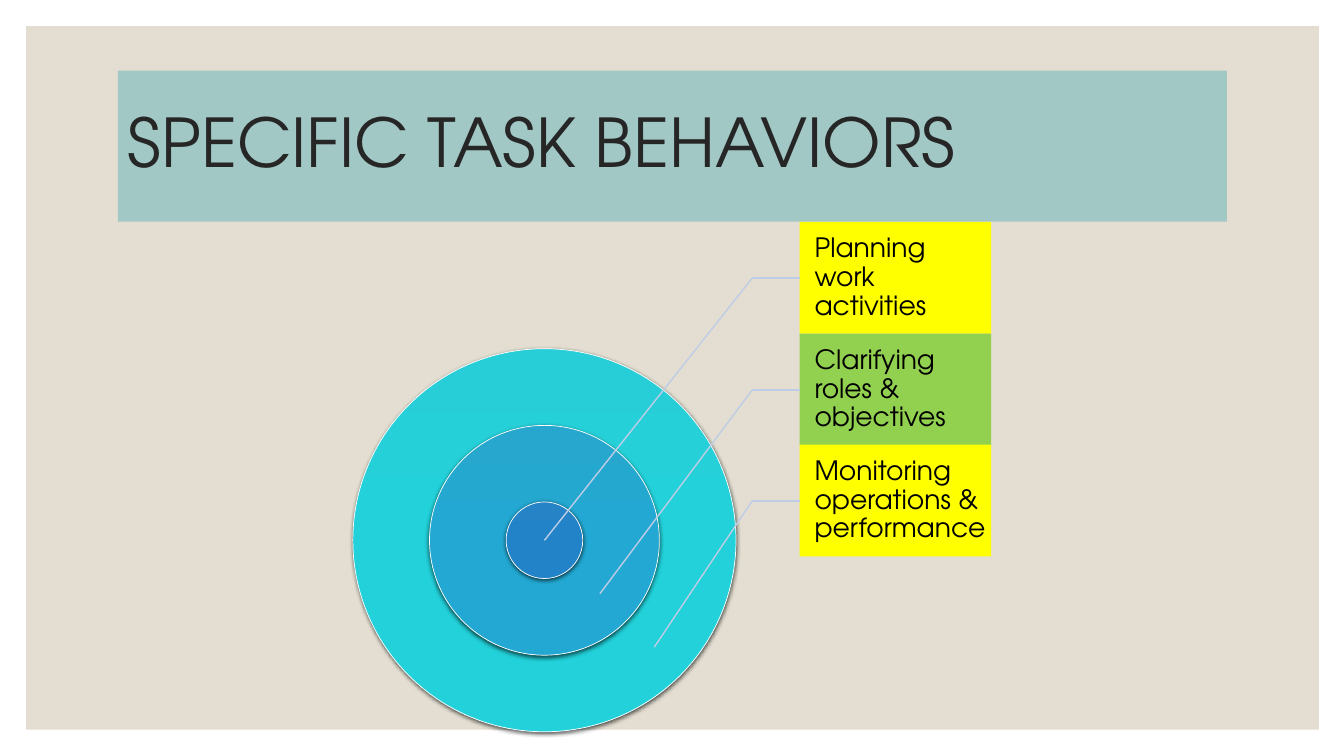
from dataclasses import dataclass

from pptx import Presentation
from pptx import util as u
from pptx.dml.color import RGBColor
from pptx.enum import shapes, text
from pptx.oxml import parse_xml
from pptx.oxml.ns import nsdecls, qn

PX = 9144  # EMU in one px, 100 px to the inch


@dataclass(frozen=True)
class Theme:
    font: str = "TeX Gyre Adventor"
    panel: str = "E3DED1"
    banner: str = "A1C8C5"
    title: str = "262626"
    label: str = "000000"
    outline: str = "FFFFFF"
    leader: str = "BECDE5"
    yellow: str = "FFFF00"
    green: str = "92D050"
    title_size: int = 48
    label_size: int = 19


@dataclass(frozen=True)
class Behavior:
    """A labelled task behavior and the point in the rings its leader reaches."""
    caption: str
    fill: str
    target: tuple[int, int]


@dataclass(frozen=True)
class Ring:
    diameter: int
    gradient: tuple[str, str, str]


THEME = Theme()
CENTER_X, CENTER_Y = 540, 536
RINGS = [
    Ring(380, ("27CED7", "22D1DA", "22D0D9")),
    Ring(228, ("27A7CE", "22A8D2", "22A8D1")),
    Ring(76, ("2683C6", "2283C9", "2282C8")),
]
BEHAVIORS = [
    Behavior("Planning work activities", THEME.yellow, (CENTER_X, CENTER_Y)),
    Behavior("Clarifying roles & objectives", THEME.green, (595, 589)),
    Behavior("Monitoring operations & performance", THEME.yellow, (649, 642)),
]
LABEL_LEFT, LABEL_TOP, LABEL_WIDTH, LABEL_HEIGHT = 793, 220, 190, 111
STACK_HEIGHT = 332
ELBOW_X = 746


def add_preset(slide, preset, left: int, top: int, width: int, height: int):
    """Add a preset shape without line or shadow."""
    shape = slide.shapes.add_shape(preset, *(n * PX for n in (left, top, width, height)))
    shape.shadow.inherit = False
    shape.line.fill.background()
    return shape


def add_block(slide, left: int, top: int, width: int, height: int, fill: str):
    block = add_preset(slide, shapes.MSO_SHAPE.RECTANGLE, left, top, width, height)
    block.fill.solid()
    block.fill.fore_color.rgb = RGBColor.from_string(fill)
    return block


def write(block, caption: str, size: int, color: str, insets: dict[str, int]) -> None:
    frame = block.text_frame
    frame.word_wrap = True
    frame.vertical_anchor = text.MSO_ANCHOR.MIDDLE
    for side, inset in insets.items():
        setattr(frame, f"margin_{side}", inset * PX)
    paragraph = frame.paragraphs[0]
    paragraph.text = caption
    paragraph.alignment = text.PP_ALIGN.LEFT
    paragraph.line_spacing = 0.9
    font = paragraph.runs[0].font
    for name, value in {"name": THEME.font, "size": u.Pt(size)}.items():
        setattr(font, name, value)
    font.color.rgb = RGBColor.from_string(color)


def add_ring(slide, ring: Ring) -> None:
    """Draw a disc about the common center, with a gradient and a soft shadow."""
    radius = ring.diameter // 2
    disc = add_preset(slide, shapes.MSO_SHAPE.OVAL, CENTER_X - radius, CENTER_Y - radius,
                      ring.diameter, ring.diameter)
    disc.line.color.rgb = RGBColor.from_string(THEME.outline)
    disc.line.width = u.Pt(0.5)
    stops = "".join(
        f'<a:gs pos="{i * 50000}"><a:srgbClr val="{color}"/></a:gs>'
        for i, color in enumerate(ring.gradient))
    properties = disc.element.spPr
    properties.find(qn("a:prstGeom")).addnext(parse_xml(
        f'<a:gradFill {nsdecls("a")} rotWithShape="1"><a:gsLst>{stops}</a:gsLst>'
        '<a:lin ang="5400000" scaled="0"/></a:gradFill>'))
    properties.find(qn("a:effectLst")).append(parse_xml(
        f'<a:outerShdw {nsdecls("a")} blurRad="{u.Pt(3)}" dist="{u.Pt(1)}" dir="5400000" '
        'algn="ctr" rotWithShape="0"><a:srgbClr val="000000"><a:alpha val="63000"/>'
        '</a:srgbClr></a:outerShdw>'))


def add_leader(slide, start: tuple[int, int], end: tuple[int, int]) -> None:
    leader = slide.shapes.add_connector(
        shapes.MSO_CONNECTOR.STRAIGHT, *(n * PX for n in start + end))
    leader.line.color.rgb = RGBColor.from_string(THEME.leader)
    leader.line.width = u.Pt(1)
    leader.element.spPr.append(parse_xml(f'<a:effectLst {nsdecls("a")}/>'))


def add_behavior(slide, behavior: Behavior, index: int) -> None:
    top = LABEL_TOP + round(index * STACK_HEIGHT / len(BEHAVIORS))
    label = add_block(slide, LABEL_LEFT, top, LABEL_WIDTH, LABEL_HEIGHT, behavior.fill)
    write(label, behavior.caption, THEME.label_size, THEME.label,
          {"left": 15, "top": 3, "right": 3, "bottom": 3})
    elbow = (ELBOW_X, top + 56)
    add_leader(slide, elbow, (LABEL_LEFT, top + 56))
    add_leader(slide, elbow, behavior.target)


def main() -> None:
    deck = Presentation()
    deck.slide_width, deck.slide_height = 1333 * PX, 750 * PX
    slide = deck.slides.add_slide(deck.slide_layouts[6])
    add_block(slide, 26, 26, 1282, 698, THEME.panel)
    banner = add_block(slide, 117, 70, 1100, 150, THEME.banner)
    write(banner, "SPECIFIC TASK BEHAVIORS", THEME.title_size, THEME.title,
          {"left": 10, "top": 5, "right": 10, "bottom": 5})
    for ring in RINGS:
        add_ring(slide, ring)
    for index, behavior in enumerate(BEHAVIORS):
        add_behavior(slide, behavior, index)
    deck.save("out.pptx")


if __name__ == "__main__":
    main()
